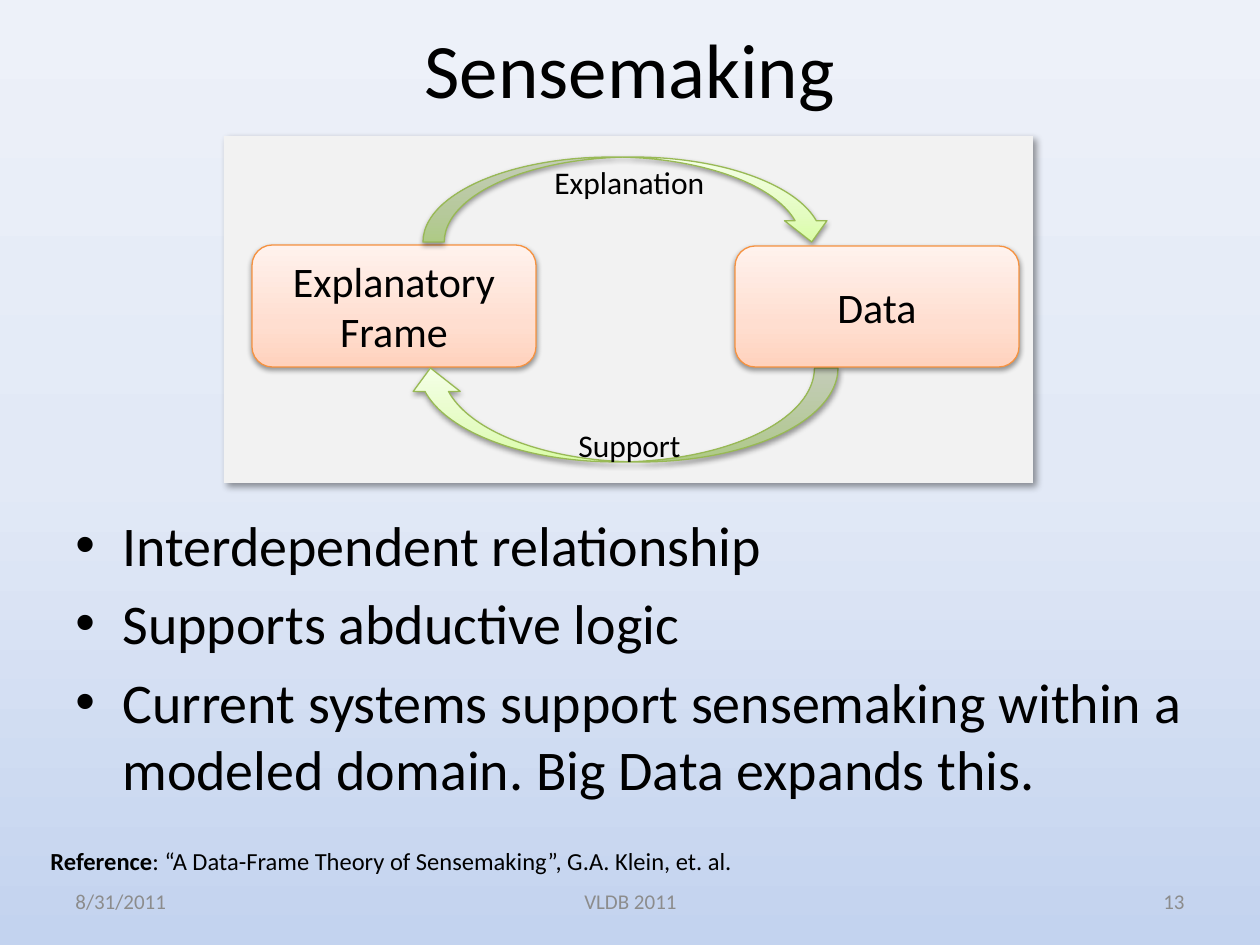
from dataclasses import dataclass, field
from typing import Any

from lxml.etree import SubElement
from pptx import Presentation
from pptx.dml.color import RGBColor
from pptx.enum.shapes import MSO_SHAPE as Kind
from pptx.enum.text import MSO_ANCHOR as Anchor, PP_ALIGN as Align
from pptx.oxml.ns import qn
from pptx.util import Emu, Pt

SCALE = 914400 / 126
Box = tuple[int, int, int, int]
Stops = tuple[tuple[int, str], ...]


@dataclass(frozen=True)
class Shade:
    alpha: int
    blur: float
    dist: float
    angle: int


@dataclass(frozen=True)
class Theme:
    font: str = "Calibri"
    ink: str = "000000"
    gray: str = "8C8C8C"
    panel: str = "F2F2F2"
    rim: str = "F69240"
    edge: str = "98B955"
    sky: Stops = ((0, "C3D3EF"), (50, "E2E9F6"), (100, "EDF1F9"))
    peach: Stops = ((0, "FFD2BD"), (35, "FFDED0"), (100, "FFF2ED"))
    lime: Stops = ((0, "DAFDA7"), (35, "E4FCC2"), (100, "F5FFE7"))
    title: int = 44
    body: int = 32
    node: int = 24
    label: int = 18
    note: int = 14
    foot: int = 12
    deep: Shade = Shade(40, 4, 3, 45)
    soft: Shade = Shade(38, 3.1, 1.6, 90)


THEME = Theme()


@dataclass(frozen=True)
class Part:
    kind: Kind
    box: Box
    stops: Stops
    line: str
    lines: tuple[str, ...] = ()
    flip: bool = False


@dataclass(frozen=True)
class Label:
    box: Box
    lines: tuple[str, ...]
    size: int
    style: dict[str, Any] = field(default_factory=dict)


PARTS = (
    Part(Kind.ROUNDED_RECTANGLE, (252, 245, 284, 122), THEME.peach, THEME.rim,
         ("Explanatory", "Frame")),
    Part(Kind.CURVED_DOWN_ARROW, (423, 157, 410, 85), THEME.lime, THEME.edge),
    Part(Kind.CURVED_UP_ARROW, (407, 368, 431, 94), THEME.lime, THEME.edge, flip=True),
    Part(Kind.ROUNDED_RECTANGLE, (735, 246, 284, 121), THEME.peach, THEME.rim, ("Data",)),
)
LOOSE = {"wrap": False}
TAGS = (
    Label((566, 420, 128, 50), ("Support",), THEME.label, LOOSE),
    Label((542, 157, 178, 50), ("Explanation",), THEME.label, LOOSE),
)
HEADS = (
    Label((63, 10, 1134, 116), ("Sensemaking",), THEME.title,
          {"align": Align.CENTER, "anchor": Anchor.MIDDLE}),
    Label((63, 504, 1134, 357), (
        "Interdependent relationship",
        "Supports abductive logic",
        "Current systems support sensemaking within a modeled domain. Big Data expands this.",
    ), THEME.body, {"dent": 47}),
)
FOOT = {"color": THEME.gray, "anchor": Anchor.MIDDLE}
NOTES = (
    Label((903, 876, 294, 50), ("13",), THEME.foot, FOOT | {"align": Align.RIGHT}),
    Label((38, 840, 711, 43), (": “A Data-Frame Theory of Sensemaking”, G.A. Klein, et. al.",),
          THEME.note, LOOSE | {"lead": "Reference"}),
    Label((63, 876, 294, 50), ("8/31/2011",), THEME.foot, FOOT),
    Label((431, 876, 399, 50), ("VLDB 2011",), THEME.foot, FOOT | {"align": Align.CENTER}),
)


def px(num: int) -> Emu:
    return Emu(round(num * SCALE))


def place(box: Box) -> list[Emu]:
    return [px(num) for num in box]


def write(frame: Any, lines: tuple[str, ...], size: int, *, color: str = THEME.ink,
          align: Align = Align.LEFT, anchor: Anchor = Anchor.TOP, wrap: bool = True,
          lead: str = "", dent: int = 0) -> None:
    frame.word_wrap = wrap
    frame.vertical_anchor = anchor
    for num, line in enumerate(lines):
        para = frame.add_paragraph() if num else frame.paragraphs[0]
        para.alignment = align
        for text, bold in ((lead, True), (line, False)):
            if text:
                run = para.add_run()
                run.text = text
                font = run.font
                font.name, font.size, font.bold = THEME.font, Pt(size), bold
                font.color.rgb = RGBColor.from_string(color)
        if dent:
            para.space_before = Pt(size * 0.2)
            props = para._p.get_or_add_pPr()
            props.set("marL", str(px(dent)))
            props.set("indent", str(-px(dent)))
            SubElement(props, qn("a:buFont"), typeface="Arial")
            SubElement(props, qn("a:buChar"), char="•")


def blend(fill: Any, root: Any, stops: Stops) -> None:
    fill.gradient()
    fill.gradient_angle = 90
    items = root.find(".//" + qn("a:gsLst"))
    items.clear()
    for spot, color in stops:
        stop = SubElement(items, qn("a:gs"), pos=str(spot * 1000))
        SubElement(stop, qn("a:srgbClr"), val=color)


def cast(shape: Any, shade: Shade) -> None:
    shape.shadow.inherit = False
    root = shape._element.spPr.find(qn("a:effectLst"))
    outer = SubElement(root, qn("a:outerShdw"), blurRad=str(Pt(shade.blur)),
                       dist=str(Pt(shade.dist)), dir=str(shade.angle * 60000),
                       rotWithShape="0")
    color = SubElement(outer, qn("a:srgbClr"), val=THEME.ink)
    SubElement(color, qn("a:alpha"), val=str(shade.alpha * 1000))


def draw(shapes: Any, part: Part) -> None:
    shape = shapes.add_shape(part.kind, *place(part.box))
    blend(shape.fill, shape._element.spPr, part.stops)
    shape.line.color.rgb = RGBColor.from_string(part.line)
    shape.line.width = Pt(0.75)
    cast(shape, THEME.soft)
    if part.flip:
        shape._element.spPr.xfrm.set("flipH", "1")
    if part.lines:
        write(shape.text_frame, part.lines, THEME.node,
              align=Align.CENTER, anchor=Anchor.MIDDLE)


def label(shapes: Any, item: Label) -> None:
    frame = shapes.add_textbox(*place(item.box)).text_frame
    write(frame, item.lines, item.size, **item.style)


def main() -> None:
    deck = Presentation()
    deck.slide_width, deck.slide_height = px(1260), px(945)
    slide = deck.slides.add_slide(deck.slide_layouts[6])
    blend(slide.background.fill, slide.element, THEME.sky)
    panel = slide.shapes.add_shape(Kind.RECTANGLE, *place((224, 136, 809, 347)))
    panel.fill.solid()
    panel.fill.fore_color.rgb = RGBColor.from_string(THEME.panel)
    panel.line.fill.background()
    cast(panel, THEME.deep)
    for item in HEADS:
        label(slide.shapes, item)
    cycle = slide.shapes.add_group_shape().shapes
    for part in PARTS:
        draw(cycle, part)
    for item in TAGS:
        label(cycle, item)
    for item in NOTES:
        label(slide.shapes, item)
    deck.save("out.pptx")


if __name__ == "__main__":
    main()
